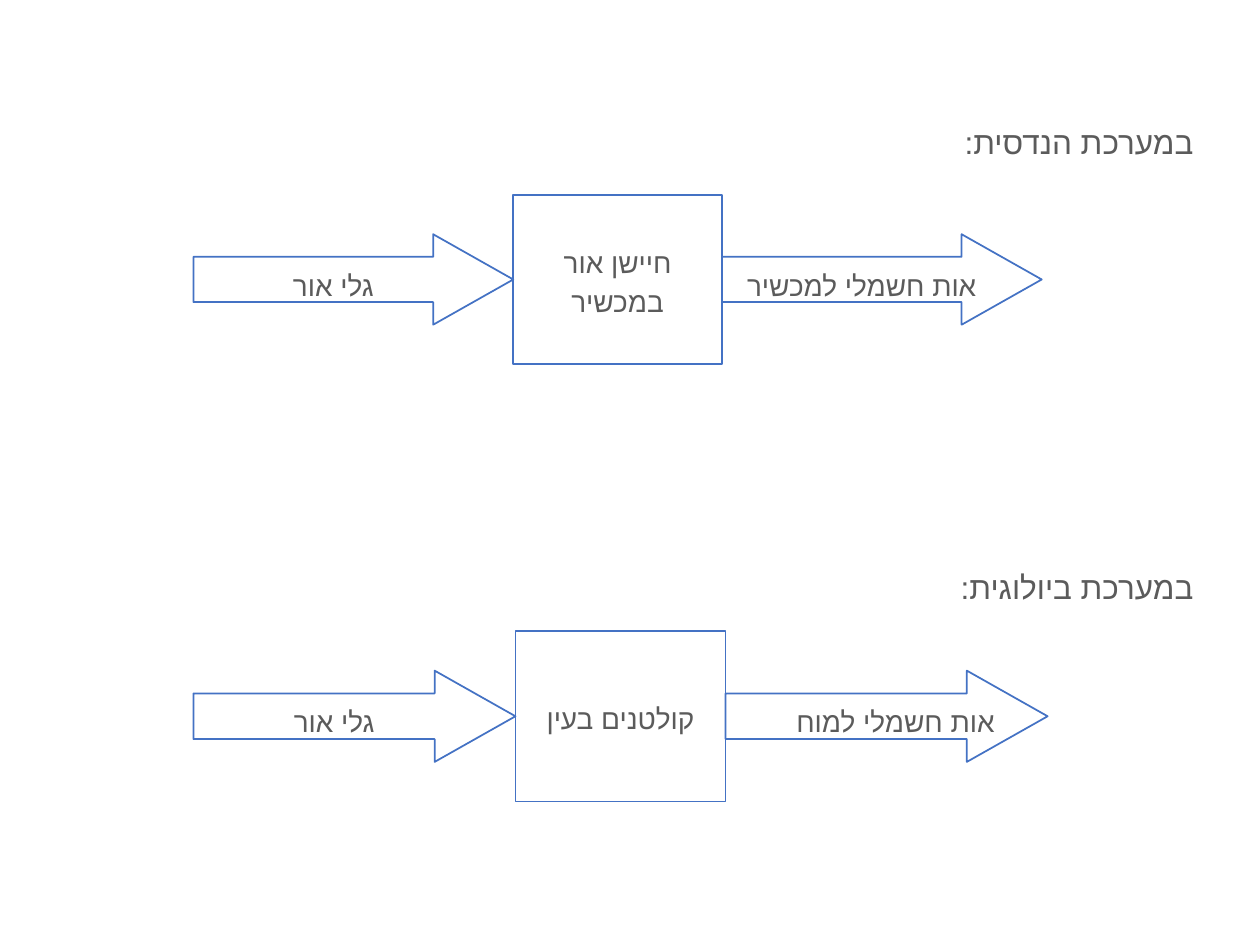
from lxml.etree import SubElement
from pptx import Presentation
from pptx.dml.color import RGBColor
from pptx.enum.shapes import MSO_SHAPE as Kind
from pptx.enum.text import MSO_ANCHOR as Anchor, PP_ALIGN as Align
from pptx.oxml.ns import qn
from pptx.util import Cm, Pt

FACE = "Arial"
GRAY, BLUE, WHITE = "5B5B5B", "4472C4", "FFFFFF"


def paint(part, tone):
    if hasattr(part, "solid"):
        part.solid()
        part = part.fore_color
    part.rgb = RGBColor.from_string(tone)


def write(frame, text, size, align):
    frame.word_wrap = True
    para = frame.paragraphs[0]
    para.text = text
    para.alignment = align
    para._p.get_or_add_pPr().set("rtl", "1")
    font = para.font
    font.name = FACE
    font.size = Pt(size)
    paint(font.color, GRAY)
    SubElement(font._element, qn("a:cs"), typeface=FACE)
    return para


def head(slide, text, left, top, wide, high):
    box = slide.shapes.add_textbox(Cm(left), Cm(top), Cm(wide), Cm(high))
    write(box.text_frame, text, 18, Align.RIGHT)


def block(shapes, kind, text, left, top, wide, high, align=Align.CENTER):
    shape = shapes.add_shape(kind, Cm(left), Cm(top), Cm(wide), Cm(high))
    shape.shadow.inherit = False
    paint(shape.fill, WHITE)
    paint(shape.line.fill, BLUE)
    shape.line.width = Pt(1)
    if kind == Kind.RIGHT_ARROW:
        shape.adjustments[0] = 0.5
        shape.adjustments[1] = 0.885
        shape.text_frame.vertical_anchor = Anchor.TOP
    else:
        shape.text_frame.vertical_anchor = Anchor.MIDDLE
    para = write(shape.text_frame, text, 16, align)
    para.line_spacing = 1.15
    para.space_after = Pt(10)


def flow(slide, source, sensor, signal, left, top, wide, high, align):
    shapes = slide.shapes.add_group_shape().shapes
    arm = wide * 0.377
    core = wide - 2 * arm
    tall = high * 0.535
    drop = top + (high - tall) / 2
    block(shapes, Kind.RECTANGLE, sensor, left + arm, top, core, high)
    block(shapes, Kind.RIGHT_ARROW, source, left, drop, arm, tall)
    block(shapes, Kind.RIGHT_ARROW, signal, left + arm + core, drop,
          arm, tall, align)


def main():
    deck = Presentation()
    deck.slide_width, deck.slide_height = Cm(25.4), Cm(19.05)
    slide = deck.slides.add_slide(deck.slide_layouts[6])
    rows = [
        ("במערכת הנדסית:", 2.36, "חיישן אור במכשיר", "אות חשמלי למכשיר",
         3.93, 17.1, 3.41, Align.CENTER),
        ("במערכת ביולוגית:", 11.33, "קולטנים בעין", "אות חשמלי למוח",
         12.72, 17.22, 3.44, Align.JUSTIFY),
    ]
    for title, rise, sensor, signal, top, wide, high, align in rows:
        head(slide, title, 6.81, rise, 17.5, 1.03)
        flow(slide, "גלי אור", sensor, signal, 3.9, top, wide, high, align)
    deck.save("out.pptx")


if __name__ == "__main__":
    main()
